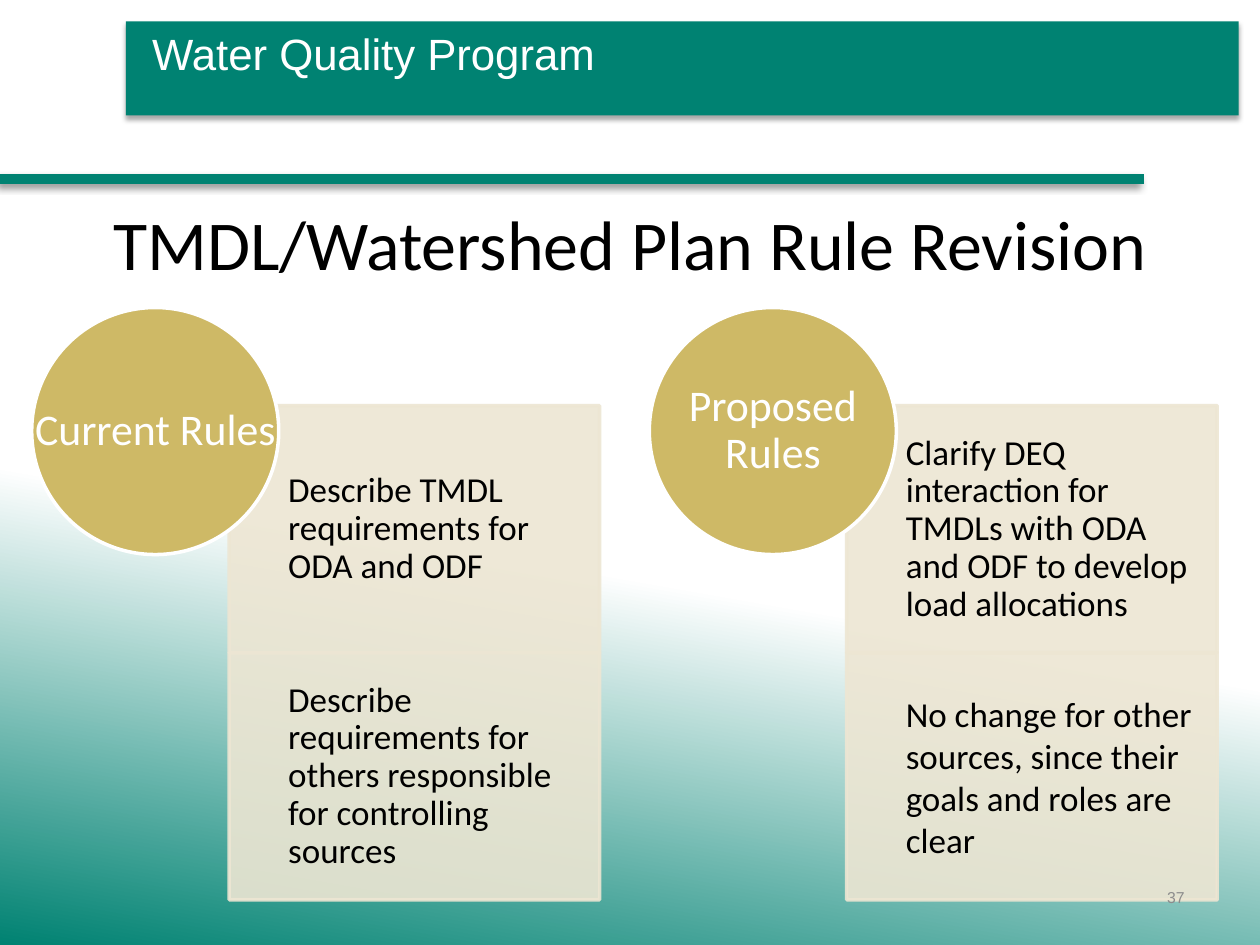
from pptx import Presentation
from pptx.dml.color import RGBColor
from pptx.enum.shapes import MSO_CONNECTOR, MSO_SHAPE
from pptx.enum.text import MSO_ANCHOR, PP_ALIGN
from pptx.oxml import parse_xml
from pptx.oxml.ns import nsdecls, qn
from pptx.util import Cm, Pt

TEAL, SAND, GOLD = "008272", "EDE6D3", "CEB966"
WHITE, BLACK, GREY = "FFFFFF", "000000", "8C8C8C"


def color(value):
    return RGBColor.from_string(value)


def set_text(shape, text, size=20, font="Calibri", fill=BLACK, align=PP_ALIGN.LEFT,
             spacing=0.9, insets=(0, 0, 0, 0)):
    """Write one paragraph; insets are left, top, right, bottom in cm."""
    frame = shape.text_frame
    frame.word_wrap = True
    frame.vertical_anchor = MSO_ANCHOR.MIDDLE
    (frame.margin_left, frame.margin_top,
     frame.margin_right, frame.margin_bottom) = [Cm(inset) for inset in insets]
    paragraph = frame.paragraphs[0]
    paragraph.alignment = align
    paragraph.line_spacing = spacing
    run = paragraph.add_run()
    run.text = text
    run.font.size = Pt(size)
    run.font.name = font
    run.font.color.rgb = color(fill)


def set_alpha(fill, percent):
    element = fill._xPr.find(qn("a:solidFill"))[0]
    element.append(parse_xml(f'<a:alpha {nsdecls("a")} val="{percent * 1000}"/>'))


def set_shadow(shape, blur, distance, angle, alpha):
    properties = shape._element.spPr
    for effects in properties.findall(qn("a:effectLst")):
        properties.remove(effects)
    properties.append(parse_xml(
        f'<a:effectLst {nsdecls("a")}><a:outerShdw blurRad="{Pt(blur)}" '
        f'dist="{Pt(distance)}" dir="{angle * 60000}" rotWithShape="0">'
        f'<a:srgbClr val="{BLACK}"><a:alpha val="{alpha * 1000}"/></a:srgbClr>'
        '</a:outerShdw></a:effectLst>'))


class SlideBuilder:
    def __init__(self, slide):
        self.slide = slide

    def background(self):
        fill = self.slide.background.fill
        fill.gradient()
        fill.gradient_angle = 260
        for stop, position, value in zip(fill.gradient_stops, (0.59, 1), (WHITE, TEAL)):
            stop.position = position
            stop.color.rgb = color(value)

    def title(self, text, box):
        title = self.slide.shapes.title
        title.left, title.top, title.width, title.height = [Cm(length) for length in box]
        set_text(title, text, size=40, align=PP_ALIGN.CENTER, spacing=1,
                 insets=(0.25, 0.13, 0.25, 0.13))

    def shape(self, kind, box, fill, line=None, alpha=None):
        shape = self.slide.shapes.add_shape(kind, *[Cm(length) for length in box])
        shape.shadow.inherit = False
        shape.fill.solid()
        shape.fill.fore_color.rgb = color(fill)
        if line:
            shape.line.color.rgb = color(line)
            shape.line.width = Pt(2)
        else:
            shape.line.fill.background()
        if alpha:
            set_alpha(shape.fill, alpha)
            set_alpha(shape.line.fill, alpha)
        return shape

    def rule(self, left, right, top):
        rule = self.slide.shapes.add_connector(
            MSO_CONNECTOR.STRAIGHT, Cm(left), Cm(top), Cm(right), Cm(top))
        rule.line.color.rgb = color(TEAL)
        rule.line.width = Pt(6)
        set_shadow(rule, blur=4, distance=3, angle=135, alpha=40)

    def text_box(self, text, box, **style):
        text_box = self.slide.shapes.add_textbox(*[Cm(length) for length in box])
        set_text(text_box, text, **style)

    def cell(self, text, box, spacing):
        cell = self.shape(MSO_SHAPE.RECTANGLE, box, SAND, line=SAND, alpha=90)
        set_text(cell, text, spacing=spacing, insets=(1.19, 0.41, 0.41, 0.41))

    def circle(self, text, box):
        self.shape(MSO_SHAPE.OVAL, box, GOLD, line=WHITE)
        # The label uses the full width of the circle
        self.text_box(text, box, size=25, fill=WHITE, align=PP_ALIGN.CENTER)


def main():
    presentation = Presentation()
    presentation.slide_width, presentation.slide_height = Cm(25.4), Cm(19.05)
    builder = SlideBuilder(presentation.slides.add_slide(presentation.slide_layouts[5]))
    builder.background()

    # Program banner and rule
    banner = builder.shape(MSO_SHAPE.RECTANGLE, (2.54, 0.43, 22.43, 1.9), TEAL)
    set_text(banner, "Water Quality Program", size=25, font="Arial", fill=WHITE,
             insets=(0.53, 0, 0.53, 0.48))
    set_shadow(banner, blur=3.1, distance=1.8, angle=90, alpha=35)
    builder.rule(0, 23.06, 3.61)
    builder.title("TMDL/Watershed Plan Rule Revision", (1.27, 3.61, 22.86, 2.54))

    # Columns: two stacked cells with a heading circle on the corner
    columns = [
        ("Current Rules", [
            ("Describe TMDL requirements for ODA and ODF", 0.9),
            ("Describe requirements for others responsible for controlling sources", 0.9)]),
        ("Proposed Rules", [
            ("Clarify DEQ interaction for TMDLs with ODA and ODF to develop "
             "load allocations", 0.9),
            ("No change for other sources, since their goals and roles are clear", 1)]),
    ]
    pitch, size = 12.45, 4.98
    for column, (heading, cells) in enumerate(columns):
        left = 0.64 + column * pitch
        for row, (text, spacing) in enumerate(cells):
            builder.cell(text, (left + 3.98, 8.18 + row * size, 7.47, size), spacing)
        builder.circle(heading, (left, 6.2, size, size))

    # Slide number
    builder.text_box("37", (18.21, 17.58, 5.92, 1.02), size=9, font="Arial", fill=GREY,
                     align=PP_ALIGN.RIGHT, spacing=1, insets=(0.25, 0.13, 0.25, 0.13))
    presentation.save("out.pptx")


if __name__ == "__main__":
    main()
